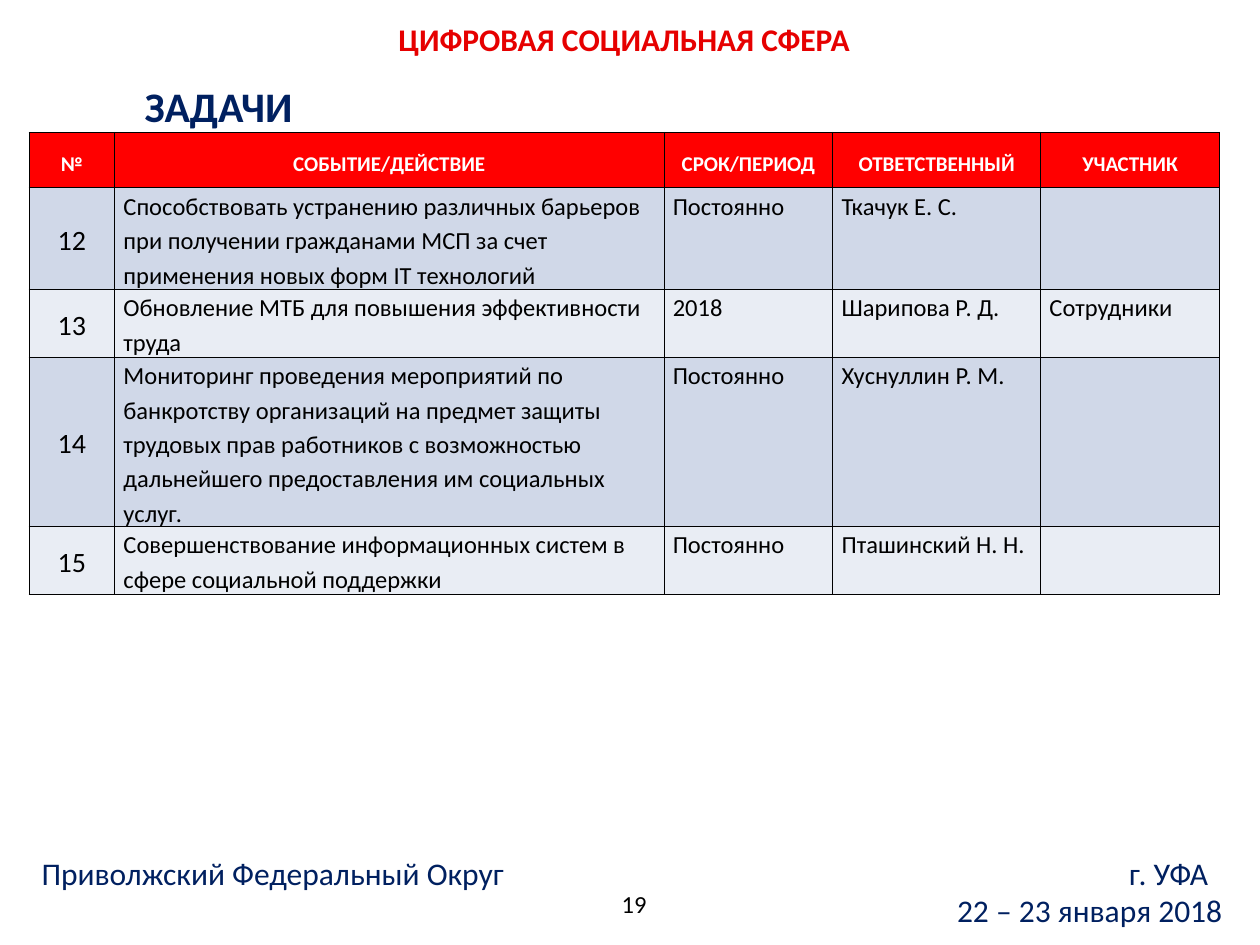
from lxml.etree import SubElement
from pptx import Presentation
from pptx.dml.color import RGBColor
from pptx.enum.text import MSO_ANCHOR, PP_ALIGN
from pptx.oxml.ns import qn
from pptx.util import Inches, Pt

FONT = "Calibri"
NAVY = "002060"
BANDS = ["D0D8E8", "E9EDF4"]
COLUMNS = [0.68, 4.36, 1.34, 1.65, 1.42]
HEIGHTS = [0.44, 0.8, 0.54, 1.34, 0.54]
HEADINGS = ["№", "СОБЫТИЕ/ДЕЙСТВИЕ", "СРОК/ПЕРИОД", "ОТВЕТСТВЕННЫЙ", "УЧАСТНИК"]
TASKS = [
    ["12", "Способствовать устранению различных барьеров при получении гражданами МСП "
     "за счет применения новых форм IT технологий", "Постоянно", "Ткачук Е. С.", ""],
    ["13", "Обновление МТБ для повышения эффективности труда",
     "2018", "Шарипова Р. Д.", "Сотрудники"],
    ["14", "Мониторинг проведения мероприятий по банкротству организаций на предмет "
     "защиты трудовых прав работников с возможностью дальнейшего предоставления им "
     "социальных услуг.", "Постоянно", "Хуснуллин Р. М.", ""],
    ["15", "Совершенствование информационных систем в сфере социальной поддержки",
     "Постоянно", "Пташинский Н. Н.", ""],
]


def color(value):
    """Turn a hex string into a colour."""
    return RGBColor.from_string(value)


def style(para, size, tint, bold=False, align=PP_ALIGN.LEFT):
    """Set the font and alignment of a paragraph."""
    para.font.name = FONT
    para.font.size = Pt(size)
    para.font.bold = bold
    para.font.color.rgb = color(tint)
    para.alignment = align


def add_text(page, box, text, size, tint, bold=False, align=PP_ALIGN.LEFT,
             anchor=MSO_ANCHOR.MIDDLE):
    """Place a text box and return its frame."""
    frame = page.shapes.add_textbox(*map(Inches, box)).text_frame
    frame.word_wrap = True
    frame.vertical_anchor = anchor
    frame.text = text
    for para in frame.paragraphs:
        style(para, size, tint, bold, align)
    return frame


def add_borders(cell):
    """Draw thin black lines on all four sides of a cell."""
    properties = cell._tc.get_or_add_tcPr()
    for side in ("a:lnL", "a:lnR", "a:lnT", "a:lnB"):
        line = SubElement(properties, qn(side), w=str(Pt(0.5)))
        fill = SubElement(line, qn("a:solidFill"))
        SubElement(fill, qn("a:srgbClr"), val="000000")


def fill_cell(cell, text, fill, size, tint, spacing, bold=False, align=PP_ALIGN.LEFT):
    """Write and format one table cell."""
    add_borders(cell)
    cell.fill.solid()
    cell.fill.fore_color.rgb = color(fill)
    cell.text = text
    para = cell.text_frame.paragraphs[0]
    style(para, size, tint, bold, align)
    para.line_spacing = spacing


def add_tasks(page, box):
    """Place the table of tasks."""
    table = page.shapes.add_table(len(HEIGHTS), len(COLUMNS), *map(Inches, box)).table
    for column, width in zip(table.columns, COLUMNS):
        column.width = Inches(width)
    for row, height in zip(table.rows, HEIGHTS):
        row.height = Inches(height)
    for index, heading in enumerate(HEADINGS):
        fill_cell(table.cell(0, index), heading, "FF0000", 12, "FFFFFF", 1.5,
                  True, PP_ALIGN.CENTER)
    for number, task in enumerate(TASKS):
        for index, text in enumerate(task):
            cell = table.cell(number + 1, index)
            first = index == 0
            fill_cell(cell, text, BANDS[number % 2], 16 if first else 14, "000000", 1.15,
                      align=PP_ALIGN.CENTER if first else PP_ALIGN.LEFT)
            cell.margin_left = cell.margin_right = Inches(0.07)
            cell.margin_top = cell.margin_bottom = 0
            if first:
                cell.vertical_anchor = MSO_ANCHOR.MIDDLE


def add_heading(page, box):
    """Place the slide title and the section name."""
    left, top = box[:2]
    add_text(page, (left + 1.99, top, 3.83, 0.39), "ЦИФРОВАЯ СОЦИАЛЬНАЯ СФЕРА", 18,
             "E60000", True, PP_ALIGN.CENTER)
    add_text(page, (left, top + 0.48, 5, 0.5), "ЗАДАЧИ", 24, NAVY, True,
             anchor=MSO_ANCHOR.TOP)


def add_footer(page, box):
    """Place the region, city, dates and page number."""
    left, top = box[:2]
    frame = add_text(page, box, "Приволжский Федеральный Округ\tг. УФА\n22 – 23 января 2018",
                     18, NAVY)
    frame.margin_left = Inches(0.2)
    place, dates = frame.paragraphs
    dates.alignment = PP_ALIGN.RIGHT
    tabs = place._p.get_or_add_pPr()
    stops = tabs.makeelement(qn("a:tabLst"), {})
    SubElement(stops, qn("a:tab"), pos=str(Inches(9.26)), algn="r")
    tabs.find(qn("a:defRPr")).addprevious(stops)
    add_text(page, (left + 4.65, top + 0.19, 0.45, 0.4), "19", 14, "000000",
             align=PP_ALIGN.RIGHT)


def main():
    """Build and save the deck."""
    deck = Presentation()
    deck.slide_width, deck.slide_height = Inches(10), Inches(7.5)
    page = deck.slides.add_slide(deck.slide_layouts[6])
    add_heading(page, (1.05, 0.11, 5.82, 0.98))
    add_tasks(page, (0.23, 1.05, sum(COLUMNS), sum(HEIGHTS)))
    add_footer(page, (0.13, 6.78, 9.67, 0.59))
    deck.save("out.pptx")


if __name__ == "__main__":
    main()
